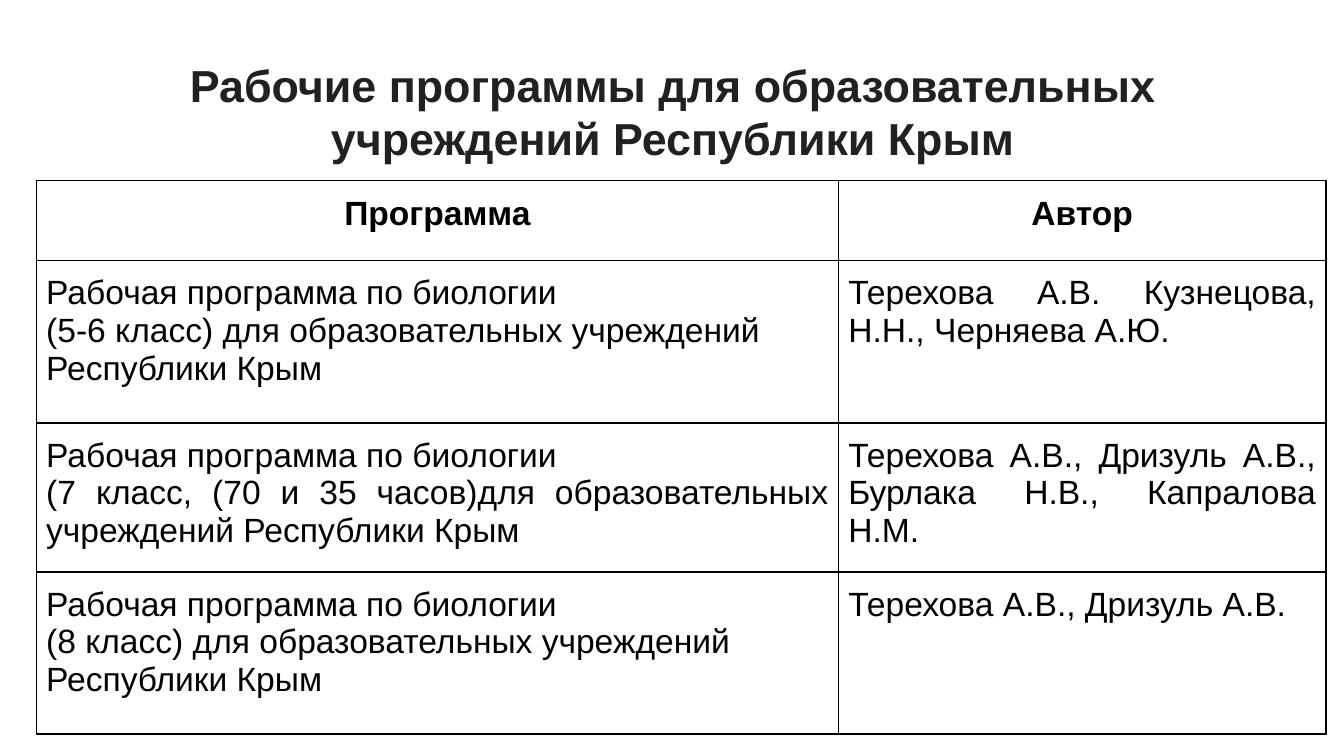
from dataclasses import dataclass

from lxml import etree
from pptx import Presentation
from pptx import util as u
from pptx.dml import color
from pptx.enum import text
from pptx.oxml import ns

PX = 9525
HUES = {"paper": "FFFFFF", "title": "212121", "ink": "000000"}
FONT = "Arial"
WIDTHS = (573, 348)
SIDE = 315
LEAD = "Рабочая программа по биологии"
HOME = "Республики Крым"


@dataclass
class Row:
    high: int
    plan: tuple[str, ...]
    names: str
    head: bool = False


ROWS = [
    Row(57, ("Программа",), "Автор", True),
    Row(116, (LEAD, "(5-6 класс) для образовательных учреждений", HOME),
        "Терехова А.В. Кузнецова, Н.Н., Черняева А.Ю."),
    Row(99, (LEAD, f"(7 класс, (70 и 35 часов)для образовательных учреждений {HOME}"),
        "Терехова А.В., Дризуль А.В., Бурлака Н.В., Капралова Н.М."),
    Row(116, (LEAD, "(8 класс) для образовательных учреждений", HOME),
        "Терехова А.В., Дризуль А.В."),
]


def px(size: int) -> u.Emu:
    return u.Emu(size * PX)


def write(frame, lines, *, size=18, bold=False, hue="ink", align="JUSTIFY") -> None:
    frame.word_wrap = True
    for i, line in enumerate(lines):
        para = frame.paragraphs[0] if i == 0 else frame.add_paragraph()
        para.alignment = getattr(text.PP_ALIGN, align)
        run = para.add_run()
        run.text = line
        run.font.name = FONT
        run.font.size = u.Pt(size)
        run.font.bold = bold
        run.font.color.rgb = color.RGBColor.from_string(HUES[hue])


def pad(box, side: int) -> None:
    box.margin_left = box.margin_right = px(side)
    box.margin_top = box.margin_bottom = px(10)


def edge(cell) -> None:
    props = cell._tc.get_or_add_tcPr()
    for i, side in enumerate(("lnL", "lnR", "lnT", "lnB")):
        line = etree.Element(ns.qn(f"a:{side}"), w=str(u.Pt(1)))
        fill = etree.SubElement(line, ns.qn("a:solidFill"))
        etree.SubElement(fill, ns.qn("a:srgbClr"), val=HUES["ink"])
        props.insert(i, line)


def draw(slide, rows: list[Row]) -> None:
    shape = slide.shapes.add_table(
        len(rows), len(WIDTHS), px(26), px(129), px(SIDE), px(SIDE))
    grid = shape.table
    grid.first_row = grid.horz_banding = False
    for col, width in zip(grid.columns, WIDTHS):
        col.width = px(width)
    for i, row in enumerate(rows):
        grid.rows[i].height = px(row.high)
        for j, lines in enumerate((row.plan, (row.names,))):
            cell = grid.cell(i, j)
            cell.fill.solid()
            cell.fill.fore_color.rgb = color.RGBColor.from_string(HUES["paper"])
            pad(cell, 7)
            edge(cell)
            write(cell.text_frame, lines, bold=row.head,
                  align="CENTER" if row.head else "JUSTIFY")
    shape.width = shape.height = px(SIDE)


def main() -> None:
    deck = Presentation()
    deck.slide_width, deck.slide_height = px(960), px(540)
    slide = deck.slides.add_slide(deck.slide_layouts[6])
    box = slide.shapes.add_textbox(px(33), px(31), px(895), px(84)).text_frame
    pad(box, 10)
    write(box, ["Рабочие программы для образовательных учреждений Республики Крым"],
          size=24, bold=True, hue="title", align="CENTER")
    draw(slide, ROWS)
    deck.save("out.pptx")


if __name__ == "__main__":
    main()
